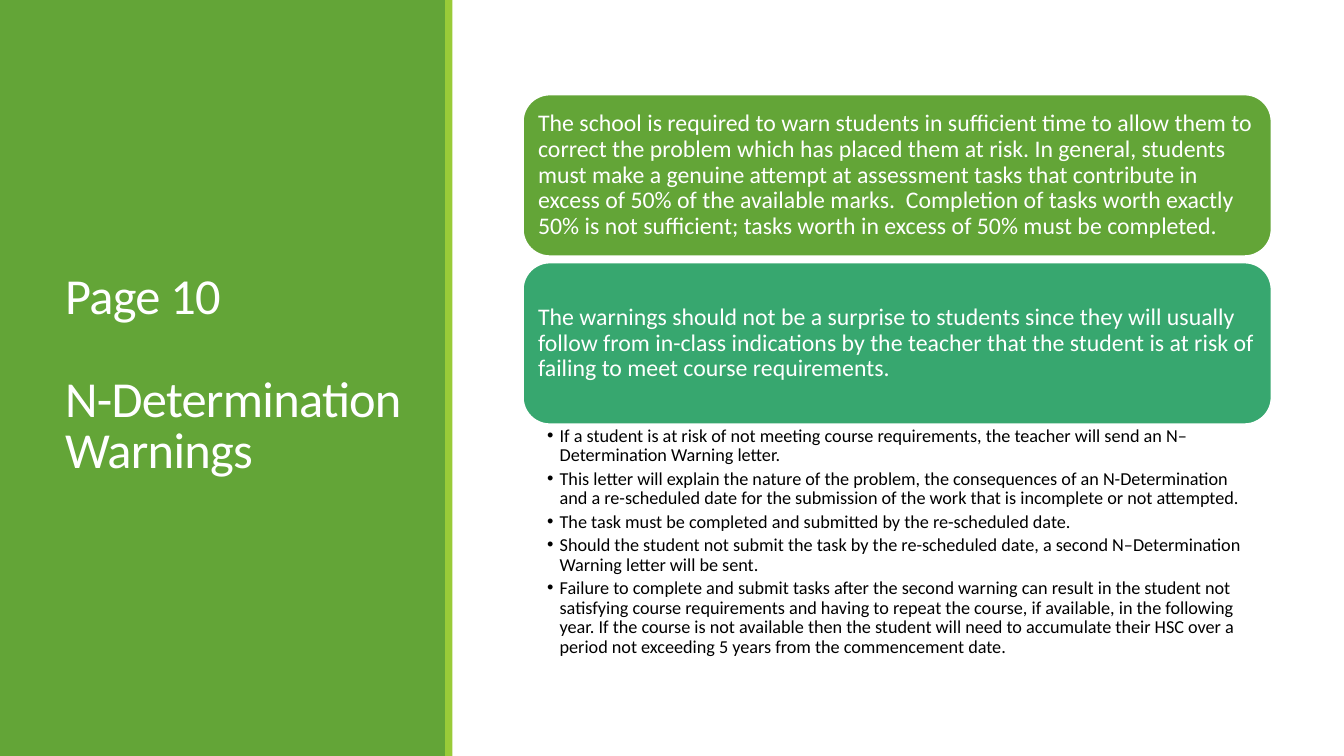
"""Build the slide on N-Determination warnings."""
import copy
import dataclasses

import pptx
import pptx.dml.color
import pptx.enum.shapes
import pptx.enum.text
import pptx.oxml.ns
import pptx.util

Kind = pptx.enum.shapes.MSO_SHAPE
Anchor = pptx.enum.text.MSO_ANCHOR
SCALE = 9525


@dataclasses.dataclass
class Theme:
    font: str = "Calibri"
    green: str = "63A537"
    lime: str = "99CB38"
    teal: str = "37A76F"
    white: str = "FFFFFF"
    black: str = "000000"
    title: int = 36
    card: int = 17
    body: int = 13


def px(count):
    return pptx.util.Emu(count * SCALE)


def color(code):
    return pptx.dml.color.RGBColor.from_string(code)


def apply(item, values):
    for name, value in values.items():
        setattr(item, name, value)


class Deck:
    def __init__(self, theme):
        self.theme = theme
        self.file = pptx.Presentation()
        apply(self.file, {"slide_width": px(1280), "slide_height": px(720)})
        self.slide = self.file.slides.add_slide(self.file.slide_layouts[1])

    def shape(self, kind, box, fill, line=None):
        shape = self.slide.shapes.add_shape(kind, *map(px, box))
        shape.shadow.inherit = False
        shape.fill.solid()
        shape.fill.fore_color.rgb = color(fill)
        if line:
            shape.line.color.rgb = color(line)
            shape.line.width = pptx.util.Pt(1.25)
        else:
            shape.line.fill.background()
        return shape

    def label(self, frame, texts, size, ink, inset, anchor, lead, after=0):
        left, top, right, bottom = map(px, inset)
        apply(frame, {
            "word_wrap": True,
            "auto_size": pptx.enum.text.MSO_AUTO_SIZE.NONE,
            "vertical_anchor": anchor,
            "margin_left": left, "margin_top": top,
            "margin_right": right, "margin_bottom": bottom,
        })
        frame.text = "\n".join(texts)
        for para in frame.paragraphs:
            apply(para, {
                "alignment": pptx.enum.text.PP_ALIGN.LEFT,
                "line_spacing": lead,
                "space_before": pptx.util.Pt(0),
                "space_after": pptx.util.Pt(after),
            })
            for run in para.runs:
                apply(run.font, {"name": self.theme.font, "size": pptx.util.Pt(size)})
                run.font.color.rgb = color(ink)

    def place(self, holder, box):
        self.slide.shapes._spTree.append(holder._element)
        apply(holder, dict(zip(("left", "top", "width", "height"), map(px, box))))
        return holder.text_frame

    def title(self, text, box):
        frame = self.place(self.slide.shapes.title, box)
        self.label(frame, [text], self.theme.title, self.theme.white,
                   (10, 5, 10, 5), Anchor.MIDDLE, 0.85)
        para = frame.paragraphs[0]
        for run in para.runs:
            run.font._element.set("spc", "-50")
        style = para.runs[0].font._element
        for gap in para._p.findall(pptx.oxml.ns.qn("a:br")):
            gap.append(copy.deepcopy(style))

    def card(self, text, box, fill):
        shape = self.shape(Kind.ROUNDED_RECTANGLE, box, fill, self.theme.white)
        self.label(shape.text_frame, [text], self.theme.card, self.theme.white,
                   (7, 7, 7, 7), Anchor.MIDDLE, 0.9)

    def points(self, texts, box):
        frame = self.place(self.slide.placeholders[1], box)
        self.label(frame, texts, self.theme.body, self.theme.black,
                   (23, 2, 12, 2), Anchor.TOP, 0.9, 2.6)
        for para in frame.paragraphs:
            props = para._p.get_or_add_pPr()
            props.set("marL", str(px(12)))
            props.set("indent", str(px(-12)))
            bullet = props.makeelement(pptx.oxml.ns.qn("a:buChar"), {"char": "•"})
            props.append(bullet)


CARDS = [
    "The school is required to warn students in sufficient time to allow them to "
    "correct the problem which has placed them at risk. In general, students must "
    "make a genuine attempt at assessment tasks that contribute in excess of 50% of "
    "the available marks.  Completion of tasks worth exactly 50% is not sufficient; "
    "tasks worth in excess of 50% must be completed.",
    "The warnings should not be a surprise to students since they will usually "
    "follow from in-class indications by the teacher that the student is at risk of "
    "failing to meet course requirements.",
]
POINTS = [
    "If a student is at risk of not meeting course requirements, the teacher will "
    "send an N–Determination Warning letter.",
    "This letter will explain the nature of the problem, the consequences of an "
    "N-Determination and a re-scheduled date for the submission of the work that is "
    "incomplete or not attempted.",
    "The task must be completed and submitted by the re-scheduled date.",
    "Should the student not submit the task by the re-scheduled date, a second "
    "N–Determination Warning letter will be sent.",
    "Failure to complete and submit tasks after the second warning can result in the "
    "student not satisfying course requirements and having to repeat the course, if "
    "available, in the following year. If the course is not available then the "
    "student will need to accumulate their HSC over a period not exceeding 5 years "
    "from the commencement date.",
]


def main():
    theme = Theme()
    deck = Deck(theme)
    deck.shape(Kind.RECTANGLE, (0, 0, 425, 720), theme.green)
    deck.title("Page 10\v\vN-Determination Warnings", (52, 55, 340, 606))
    deck.shape(Kind.RECTANGLE, (424, 0, 7, 720), theme.lime)
    for row, (text, fill) in enumerate(zip(CARDS, (theme.green, theme.teal))):
        deck.card(text, (498, 90 + row * 160, 713, 154), fill)
    deck.points(POINTS, (498, 404, 713, 232))
    deck.file.save("out.pptx")


if __name__ == "__main__":
    main()
